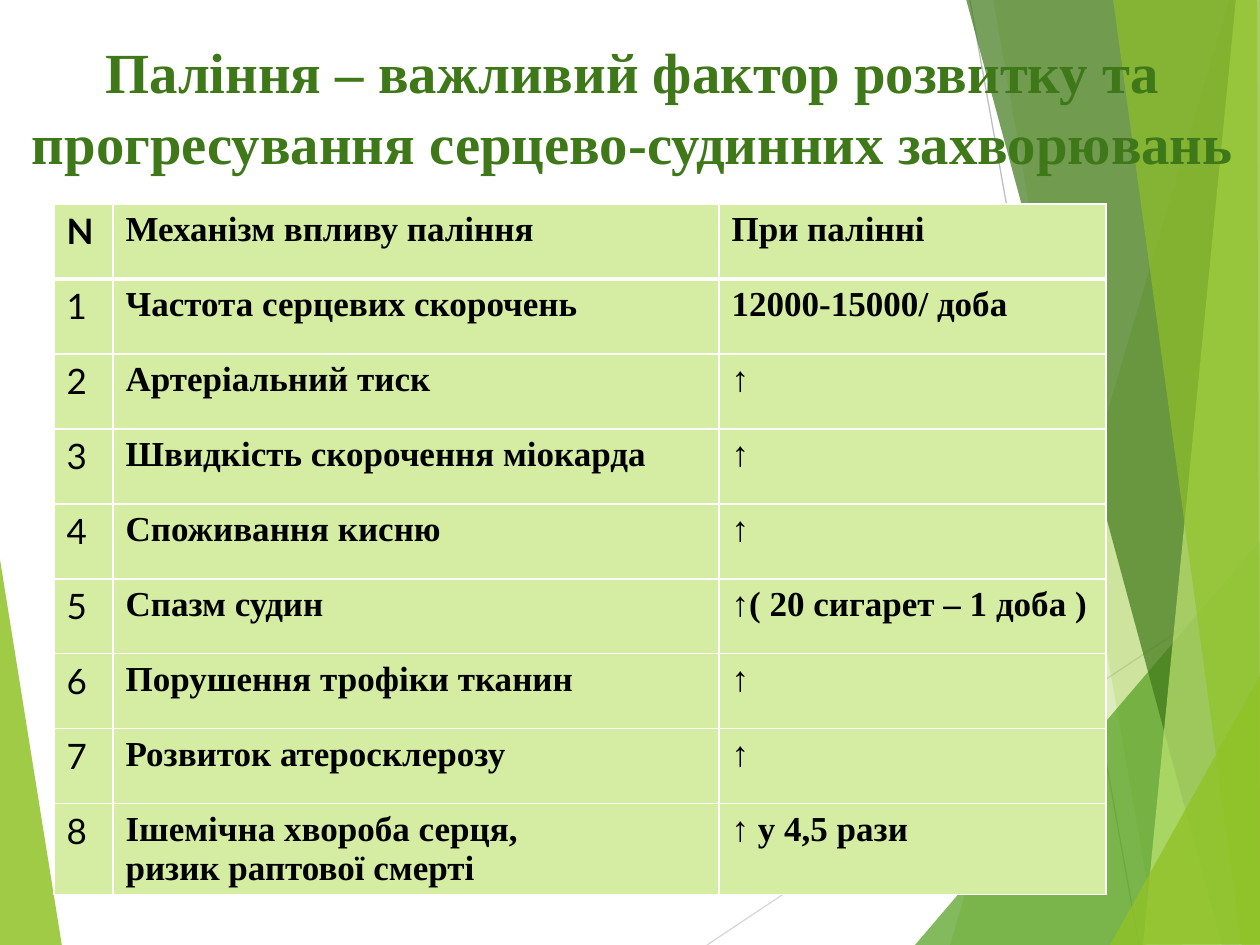
import pptx
import pptx.util
import pptx.dml.color
import pptx.enum.shapes
import pptx.enum.text
import pptx.oxml.ns
import lxml.etree
from dataclasses import dataclass

PX = 914400 / 126
SLIDE = (0, 0, 1260, 945)


@dataclass(frozen=True)
class Theme:
    serif: str = "Times New Roman"
    sans: str = "Lato"
    title_size: float = 32.4
    body_size: int = 20
    black: str = "000000"
    white: str = "FFFFFF"
    cell: str = "D5EDA2"
    lime: str = "90C226"
    pale_lime: str = "C0E474"
    leaf: str = "54A021"
    forest: str = "3F7819"
    light_grey: str = "D9D9D9"
    grey: str = "BFBFBF"


THEME = Theme()

# Points relative to the slide box, colour, opacity in percent; back to front
LEFT_SHARD = ([(-1, 553), (62, 946), (-1, 945)], THEME.lime, 85)
RIGHT_SHARDS = [
    ([(1229, 0), (950, 945), (1262, 946), (1261, 1)], THEME.lime, 30),
    ([(993, -1), (1158, 945), (1261, 945), (1261, -1)], THEME.lime, 20),
    ([(915, 945), (1260, 541), (1261, 945)], THEME.leaf, 72),
    ([(966, -1), (1222, 945), (1261, 944), (1261, -1)], THEME.forest, 70),
    ([(1236, -1), (1143, 945), (1261, 945), (1260, -1)], THEME.pale_lime, 70),
    ([(1113, -1), (1242, 945), (1260, 945), (1257, -1)], THEME.lime, 65),
    ([(1110, 945), (1261, 674), (1261, 944)], THEME.lime, 80),
]
HAIRLINES = [
    ((707, 945), (1261, 576), THEME.light_grey),
    ((970, 0), (1139, 945), THEME.grey),
]

TITLE = "Паління – важливий фактор розвитку та прогресування серцево-судинних захворювань"
HEADER = ("N", "Механізм впливу паління", "При палінні")
EFFECTS = [
    ("Частота серцевих скорочень", "12000-15000/ доба"),
    ("Артеріальний тиск", "↑"),
    ("Швидкість скорочення міокарда", "↑"),
    ("Споживання кисню", "↑"),
    ("Спазм судин", "↑( 20 сигарет – 1 доба )"),
    ("Порушення трофіки тканин", "↑"),
    ("Розвиток атеросклерозу", "↑"),
    ("Ішемічна хвороба серця,\nризик раптової смерті", "↑ у 4,5 рази"),
]
COLUMNS = (59, 606, 387)
ROW_HEIGHT, LAST_ROW_HEIGHT = 75, 91


def px(n):
    return pptx.util.Emu(round(n * PX))


def rgb(color):
    return pptx.dml.color.RGBColor.from_string(color)


def write(tf, text, font=THEME.serif, size=THEME.body_size, color=THEME.black,
          bold=True, align=pptx.enum.text.PP_ALIGN.LEFT, spacing=1.0):
    """Fill a text frame, one paragraph for each line of text."""
    for i, line in enumerate(text.split("\n")):
        p = tf.add_paragraph() if i else tf.paragraphs[0]
        p.alignment, p.line_spacing = align, spacing
        r = p.add_run()
        r.text = line
        r.font.name, r.font.size, r.font.bold = font, pptx.util.Pt(size), bold
        r.font.color.rgb = rgb(color)


def add_shard(s, box, points, color, opacity):
    left, top = box[:2]
    builder = s.shapes.build_freeform(*points[0], scale=PX)
    builder.add_line_segments(points[1:], close=True)
    sp = builder.convert_to_shape(px(left), px(top))
    sp.shadow.inherit = False
    sp.line.fill.background()
    sp.fill.solid()
    sp.fill.fore_color.rgb = rgb(color)
    clr = next(sp.element.spPr.iter(pptx.oxml.ns.qn("a:srgbClr")))
    lxml.etree.SubElement(clr, pptx.oxml.ns.qn("a:alpha"), val=str(opacity * 1000))


def add_hairline(s, box, start, end, color):
    left, top = box[:2]
    line = s.shapes.add_connector(
        pptx.enum.shapes.MSO_CONNECTOR.STRAIGHT,
        px(left + start[0]), px(top + start[1]), px(left + end[0]), px(top + end[1]))
    line.line.color.rgb = rgb(color)
    line.line.width = pptx.util.Pt(0.75)
    lxml.etree.SubElement(line.element.spPr, pptx.oxml.ns.qn("a:effectLst"))


def add_backdrop(s, box):
    add_shard(s, box, *LEFT_SHARD)
    for hairline in HAIRLINES:
        add_hairline(s, box, *hairline)
    for shard in RIGHT_SHARDS:
        add_shard(s, box, *shard)


def place_title(s, box):
    """Format the title and bring it in front of the backdrop."""
    title = s.shapes.title
    title.left, title.top, title.width, title.height = map(px, box)
    tf = title.text_frame
    tf.word_wrap = True
    tf.auto_size = pptx.enum.text.MSO_AUTO_SIZE.NONE
    tf.vertical_anchor = pptx.enum.text.MSO_ANCHOR.TOP
    tf.margin_top = px(11)
    write(tf, TITLE, size=THEME.title_size, color=THEME.forest,
          align=pptx.enum.text.PP_ALIGN.CENTER, spacing=1.04)
    title.element.getparent().append(title.element)


def set_borders(cell, **widths):
    """Draw white borders; widths in points are keyed L, R, T, B."""
    tc_pr = cell._tc.get_or_add_tcPr()
    for side, width in widths.items():
        ln = lxml.etree.SubElement(tc_pr, pptx.oxml.ns.qn(f"a:ln{side}"),
                                   w=str(pptx.util.Pt(width)))
        fill = lxml.etree.SubElement(ln, pptx.oxml.ns.qn("a:solidFill"))
        lxml.etree.SubElement(fill, pptx.oxml.ns.qn("a:srgbClr"), val=THEME.white)


def add_effects_table(s, box):
    rows = [HEADER] + [(str(n), *effect) for n, effect in enumerate(EFFECTS, 1)]
    table = s.shapes.add_table(len(rows), len(COLUMNS), *map(px, box)).table
    for column, width in zip(table.columns, COLUMNS):
        column.width = px(width)
    for i, row in enumerate(rows):
        table.rows[i].height = px(LAST_ROW_HEIGHT if i == len(rows) - 1 else ROW_HEIGHT)
        for j, text in enumerate(row):
            cell = table.cell(i, j)
            set_borders(cell, L=1, R=1, T=3 if i == 1 else 1, B=3 if i == 0 else 1)
            cell.fill.solid()
            cell.fill.fore_color.rgb = rgb(THEME.cell)
            write(cell.text_frame, text, font=THEME.serif if j else THEME.sans,
                  bold=i == 0 or j > 0)


def main():
    prs = pptx.Presentation()
    prs.slide_width, prs.slide_height = px(SLIDE[2]), px(SLIDE[3])
    s = prs.slides.add_slide(prs.slide_layouts[5])
    s.background.fill.solid()
    s.background.fill.fore_color.rgb = rgb(THEME.white)
    add_backdrop(s, SLIDE)
    place_title(s, (0, 23, 1265, 212))
    table_height = ROW_HEIGHT * len(EFFECTS) + LAST_ROW_HEIGHT
    add_effects_table(s, (54, 204, sum(COLUMNS), table_height))
    prs.save("out.pptx")


if __name__ == "__main__":
    main()
